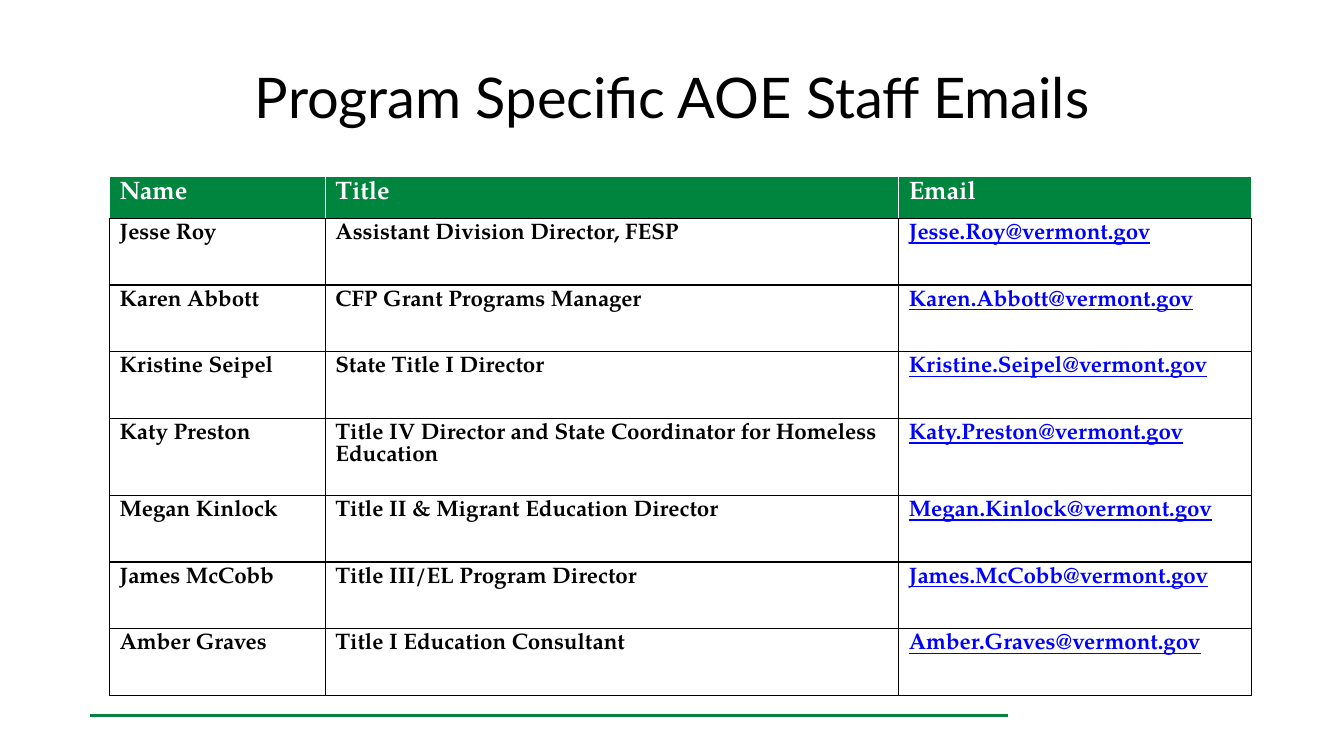
from lxml.etree import SubElement
from pptx import Presentation
from pptx.dml.color import RGBColor
from pptx.enum.shapes import MSO_CONNECTOR
from pptx.enum.text import MSO_ANCHOR, PP_ALIGN
from pptx.oxml.ns import qn
from pptx.util import Cm, Pt

COLUMN_WIDTHS = [5.44, 14.45, 8.89]
HEADER_HEIGHT, ROW_HEIGHT, TALL_ROW_HEIGHT = 1.05, 1.68, 1.94
HEADINGS = ["Name", "Title", "Email"]
STAFF = [
    ("Jesse Roy", "Assistant Division Director, FESP"),
    ("Karen Abbott", "CFP Grant Programs Manager"),
    ("Kristine Seipel", "State Title I Director"),
    ("Katy Preston", "Title IV Director and State Coordinator for Homeless Education"),
    ("Megan Kinlock", "Title II & Migrant Education Director"),
    ("James McCobb", "Title III/EL Program Director"),
    ("Amber Graves", "Title I Education Consultant"),
]


def color(value):
    return RGBColor.from_string(value)


def write(frame, text, *, font, size, ink="000000", bold=False,
          underline=False, align=PP_ALIGN.LEFT, leading=None):
    """Fill a text frame with one paragraph; leading is a multiple of the size."""
    para = frame.paragraphs[0]
    para.alignment = align
    if leading:
        para.line_spacing = Pt(round(size * leading, 1))
    span = para.add_run()
    span.text = text
    span.font.name = font
    span.font.size = Pt(size)
    span.font.bold = bold
    span.font.underline = underline
    span.font.color.rgb = color(ink)


def set_borders(cell, **sides):
    """Draw one-point borders; give each side's colour as L, R, T, B."""
    properties = cell._tc.get_or_add_tcPr()
    for position, side in enumerate("LRTB"):
        border = properties.makeelement(qn("a:ln" + side), {"w": str(Pt(1))})
        fill = SubElement(border, qn("a:solidFill"))
        SubElement(fill, qn("a:srgbClr"), val=sides[side])
        properties.insert(position, border)


class StaffPage:
    title_font = "Lato"
    body_font = "TeX Gyre Pagella"
    rule_green = "00823E"
    header_green = "00853F"
    link_blue = "0000FF"

    def __init__(self, deck):
        self.page = deck.slides.add_slide(deck.slide_layouts[6])

    def rule(self, left, right, top):
        line = self.page.shapes.add_connector(
            MSO_CONNECTOR.STRAIGHT, Cm(left), Cm(top), Cm(right), Cm(top))
        line.line.color.rgb = color(self.rule_green)
        line.line.width = Pt(2.25)
        SubElement(line._element.spPr, qn("a:effectLst"))

    def title(self, text, left, top, width, height):
        box = self.page.shapes.add_textbox(Cm(left), Cm(top), Cm(width), Cm(height))
        box.text_frame.word_wrap = True
        box.text_frame.vertical_anchor = MSO_ANCHOR.MIDDLE
        write(box.text_frame, text, font=self.title_font, size=40,
              align=PP_ALIGN.CENTER)

    def cell(self, cell, text, fill, borders, **style):
        cell.fill.solid()
        cell.fill.fore_color.rgb = color(fill)
        set_borders(cell, **borders)
        write(cell.text_frame, text, font=self.body_font, bold=True,
              leading=0.98, **style)

    def staff_table(self, left, top):
        heights = [HEADER_HEIGHT] + [
            TALL_ROW_HEIGHT if len(role) > 50 else ROW_HEIGHT for _, role in STAFF]
        table = self.page.shapes.add_table(
            len(heights), len(COLUMN_WIDTHS), Cm(left), Cm(top),
            Cm(sum(COLUMN_WIDTHS)), Cm(sum(heights))).table
        for column, width in zip(table.columns, COLUMN_WIDTHS):
            column.width = Cm(width)
        for row, height in zip(table.rows, heights):
            row.height = Cm(height)

        white_sides = dict(L="FFFFFF", R="FFFFFF", T="FFFFFF", B="000000")
        for index, heading in enumerate(HEADINGS):
            self.cell(table.cell(0, index), heading, self.header_green,
                      white_sides, size=18, ink="FFFFFF")

        black_sides = dict.fromkeys("LRTB", "000000")
        for number, (name, role) in enumerate(STAFF, start=1):
            email = name.replace(" ", ".") + "@vermont.gov"
            for index, text in enumerate((name, role, email)):
                is_email = text == email
                self.cell(table.cell(number, index), text, "FFFFFF", black_sides,
                          size=16, underline=is_email,
                          ink=self.link_blue if is_email else "000000")


def main():
    deck = Presentation()
    deck.slide_width, deck.slide_height = Cm(33.87), Cm(19.05)
    staff_page = StaffPage(deck)
    staff_page.rule(2.26, 25.4, 18.03)
    staff_page.title("Program Specific AOE Staff Emails", 1.7, 0.84, 30.48, 3.18)
    staff_page.staff_table(2.76, 4.45)
    deck.save("out.pptx")


if __name__ == "__main__":
    main()
